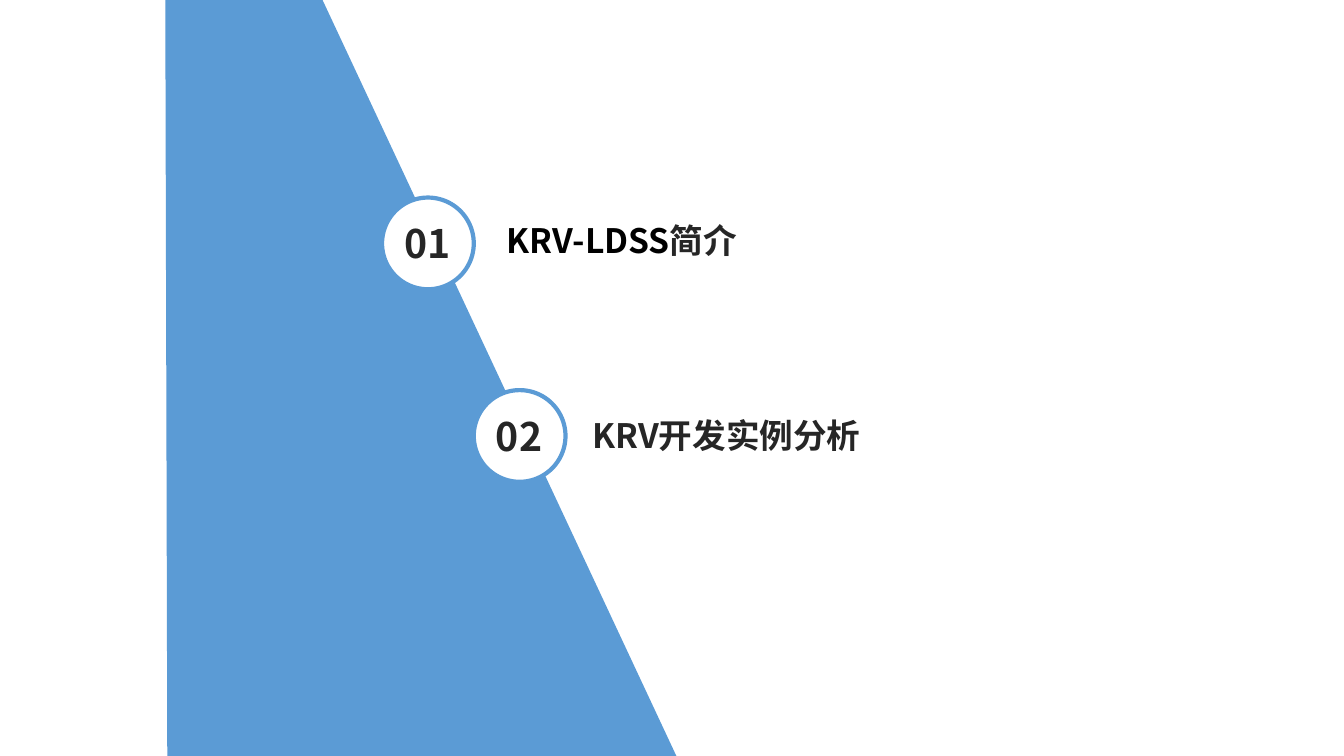
from lxml.etree import SubElement
from pptx import Presentation
from pptx.dml.color import RGBColor
from pptx.enum.shapes import MSO_SHAPE as Preset
from pptx.enum.text import PP_ALIGN as Align
from pptx.oxml.ns import qn
from pptx.util import Inches, Pt

COLORS = {"blue": "5B9BD5", "white": "FFFFFF", "dark": "262626", "black": "000000"}
FONT = "Noto Sans CJK SC"
COLUMNS, ROWS = 133.33, 75  # grid of square cells, ten to the inch
BADGE = 9.1
FIRST_BADGE = (37.9, 19.6)
BADGE_STEP = (9.1, 19.1)

# number, title runs, title left, top and width
CHAPTERS = [
    ("01", [("KRV-LDSS", "black"), ("简介", "dark")], (49.3, 21.3, 61.1)),
    ("02", [("KRV开发实例分析", "dark")], (57.8, 40.7, 54.7)),
]


def cells(count):
    return Inches(count / 10)


def color(name):
    return RGBColor.from_string(COLORS[name])


def add_text(slide, box, runs, size, align=Align.LEFT):
    """Add one bold line made of (text, colour name) runs."""
    frame = slide.shapes.add_textbox(*map(cells, box)).text_frame
    frame.word_wrap = True
    paragraph = frame.paragraphs[0]
    paragraph.alignment = align
    font = paragraph.font
    font.name, font.size, font.bold = FONT, Pt(size), True
    defaults = paragraph._p.pPr.find(qn("a:defRPr"))
    SubElement(defaults, qn("a:ea")).set("typeface", FONT)
    for text, color_name in runs:
        run = paragraph.add_run()
        run.text = text
        run.font.color.rgb = color(color_name)


def add_slanted_panel(slide):
    corners = [(67.1, ROWS), (32, 0), (16.4, 0), (16.6, ROWS)]
    points = [(cells(x), cells(y)) for x, y in corners]
    builder = slide.shapes.build_freeform(*points[0])
    builder.add_line_segments(points[1:], close=True)
    panel = builder.convert_to_shape()
    panel.shadow.inherit = False
    panel.fill.solid()
    panel.fill.fore_color.rgb = color("blue")
    panel.line.fill.background()


def add_badge(slide, left, top, number):
    circle = slide.shapes.add_shape(
        Preset.OVAL, cells(left), cells(top), cells(BADGE), cells(BADGE))
    circle.shadow.inherit = False
    circle.fill.solid()
    circle.fill.fore_color.rgb = color("white")
    circle.line.color.rgb = color("blue")
    circle.line.width = Pt(3)
    add_text(slide, (left + 0.8, top + 1.7, 7.4, 5.7), [(number, "dark")], 28, Align.CENTER)


def main():
    presentation = Presentation()
    presentation.slide_width = cells(COLUMNS)
    presentation.slide_height = cells(ROWS)
    slide = presentation.slides.add_slide(presentation.slide_layouts[6])
    add_slanted_panel(slide)
    for index, (number, title, (left, top, width)) in enumerate(CHAPTERS):
        badge_left, badge_top = (
            start + index * step for start, step in zip(FIRST_BADGE, BADGE_STEP))
        add_badge(slide, badge_left, badge_top, number)
        add_text(slide, (left, top, width, 5), title, 24)
    presentation.save("out.pptx")


if __name__ == "__main__":
    main()
